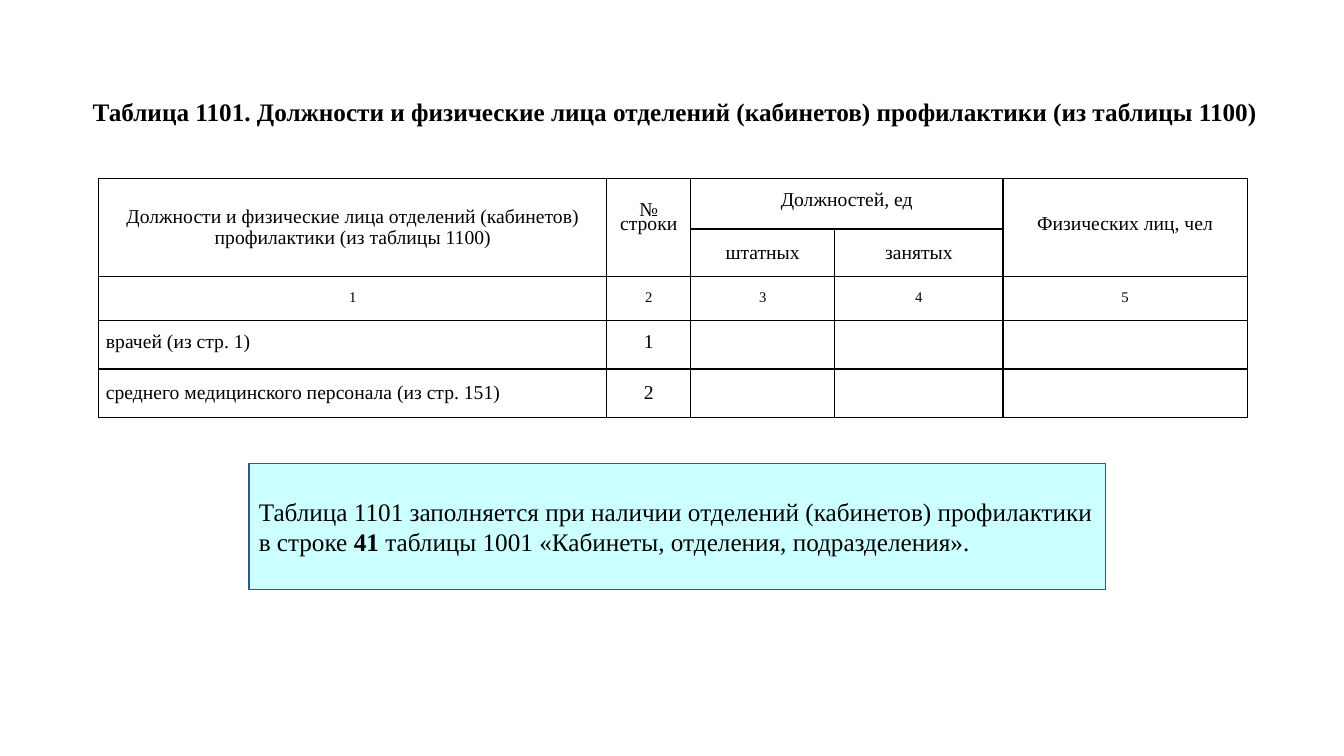
from lxml.etree import SubElement
from pptx import Presentation
from pptx.dml.color import RGBColor
from pptx.enum.shapes import MSO_SHAPE
from pptx.enum.text import MSO_ANCHOR as Anchor, MSO_AUTO_SIZE as AutoSize, PP_ALIGN as Align
from pptx.oxml.ns import qn
from pptx.util import Cm, Pt

COLORS = {"ink": "000000", "note": "CCFFFF", "edge": "325491"}


def add_text(para, text, size, bold=False):
    span = para.add_run()
    span.text = text
    span.font.color.rgb = RGBColor.from_string(COLORS["ink"])
    for name, value in {"name": "Times New Roman", "size": Pt(size), "bold": bold}.items():
        setattr(span.font, name, value)


def add_borders(cell):
    properties = cell._tc.get_or_add_tcPr()
    for index, side in enumerate(("lnL", "lnR", "lnT", "lnB")):
        line = SubElement(properties, qn(f"a:{side}"), w=str(Pt(1)))
        fill = SubElement(line, qn("a:solidFill"))
        SubElement(fill, qn("a:srgbClr"), val=COLORS["ink"])
        properties.insert(index, line)


deck = Presentation()
deck.slide_width, deck.slide_height = Cm(33.86), Cm(19.05)
page = deck.slides.add_slide(deck.slide_layouts[5])

# Title
title = page.shapes.title
title.left, title.top, title.width, title.height = Cm(2.08), Cm(2.29), Cm(29.95), Cm(1.02)
title_format = {"word_wrap": False, "auto_size": AutoSize.SHAPE_TO_FIT_TEXT, "vertical_anchor": Anchor.TOP}
for name, value in title_format.items():
    setattr(title.text_frame, name, value)
para = title.text_frame.paragraphs[0]
para.alignment = Align.LEFT
add_text(para, "Таблица 1101. Должности и физические лица отделений (кабинетов) профилактики (из таблицы 1100)",
         18, True)

# Table grid
widths = [12.8, 2.11, 3.63, 4.24, 6.15]
heights = [1.27, 1.19, 1.12, 1.22, 1.22]
table = page.shapes.add_table(len(heights), len(widths), Cm(2.49), Cm(4.5),
                              Cm(sum(widths)), Cm(sum(heights))).table
table.first_row = table.horz_banding = False
for column, width in zip(table.columns, widths):
    column.width = Cm(width)
for row, height in zip(table.rows, heights):
    row.height = Cm(height)

cell_format = {"vertical_anchor": Anchor.MIDDLE, "margin_left": Cm(0.18), "margin_right": Cm(0.18),
               "margin_top": 0, "margin_bottom": 0}
for cell in table.iter_cells():
    cell.fill.background()
    add_borders(cell)
    for name, value in cell_format.items():
        setattr(cell, name, value)
for column in (0, 1, 4):
    table.cell(0, column).merge(table.cell(1, column))
table.cell(0, 2).merge(table.cell(0, 3))
table.cell(0, 1).margin_bottom = Pt(10)

# Table text: row, column, text, exact line spacing in points
entries = [
    (0, 0, "Должности и физические лица отделений (кабинетов) профилактики (из таблицы 1100)", None),
    (0, 1, "№\nстроки", 10),
    (0, 2, "Должностей, ед", 10),
    (0, 4, "Физических лиц, чел", 10),
    (1, 2, "штатных", None),
    (1, 3, "занятых", None),
    *[(2, column, str(column + 1), 11) for column in range(len(widths))],
    (3, 0, "врачей (из стр. 1)", 11),
    (3, 1, "1", 11),
    (4, 0, "среднего медицинского персонала (из стр. 151)", None),
    (4, 1, "2", None),
]
for row, column, text, spacing in entries:
    frame = table.cell(row, column).text_frame
    for index, line in enumerate(text.split("\n")):
        para = frame.add_paragraph() if index else frame.paragraphs[0]
        para.alignment = Align.LEFT if row > 2 and column == 0 else Align.CENTER
        if spacing:
            para.line_spacing = Pt(spacing)
        add_text(para, line, 10.5 if row == 2 else 14)

# Note
note = page.shapes.add_shape(MSO_SHAPE.RECTANGLE, Cm(6.27), Cm(11.68), Cm(21.59), Cm(3.18))
note.shadow.inherit = False
note.fill.solid()
note.fill.fore_color.rgb = RGBColor.from_string(COLORS["note"])
note.line.color.rgb = RGBColor.from_string(COLORS["edge"])
note.line.width = Pt(1)
note.text_frame.word_wrap = True
note.text_frame.vertical_anchor = Anchor.MIDDLE
para = note.text_frame.paragraphs[0]
para.alignment = Align.LEFT
add_text(para, "Таблица 1101 заполняется при наличии отделений (кабинетов) профилактики в строке ", 18)
add_text(para, "41 ", 18, True)
add_text(para, "таблицы 1001 «Кабинеты, отделения, подразделения».", 18)

deck.save("out.pptx")
